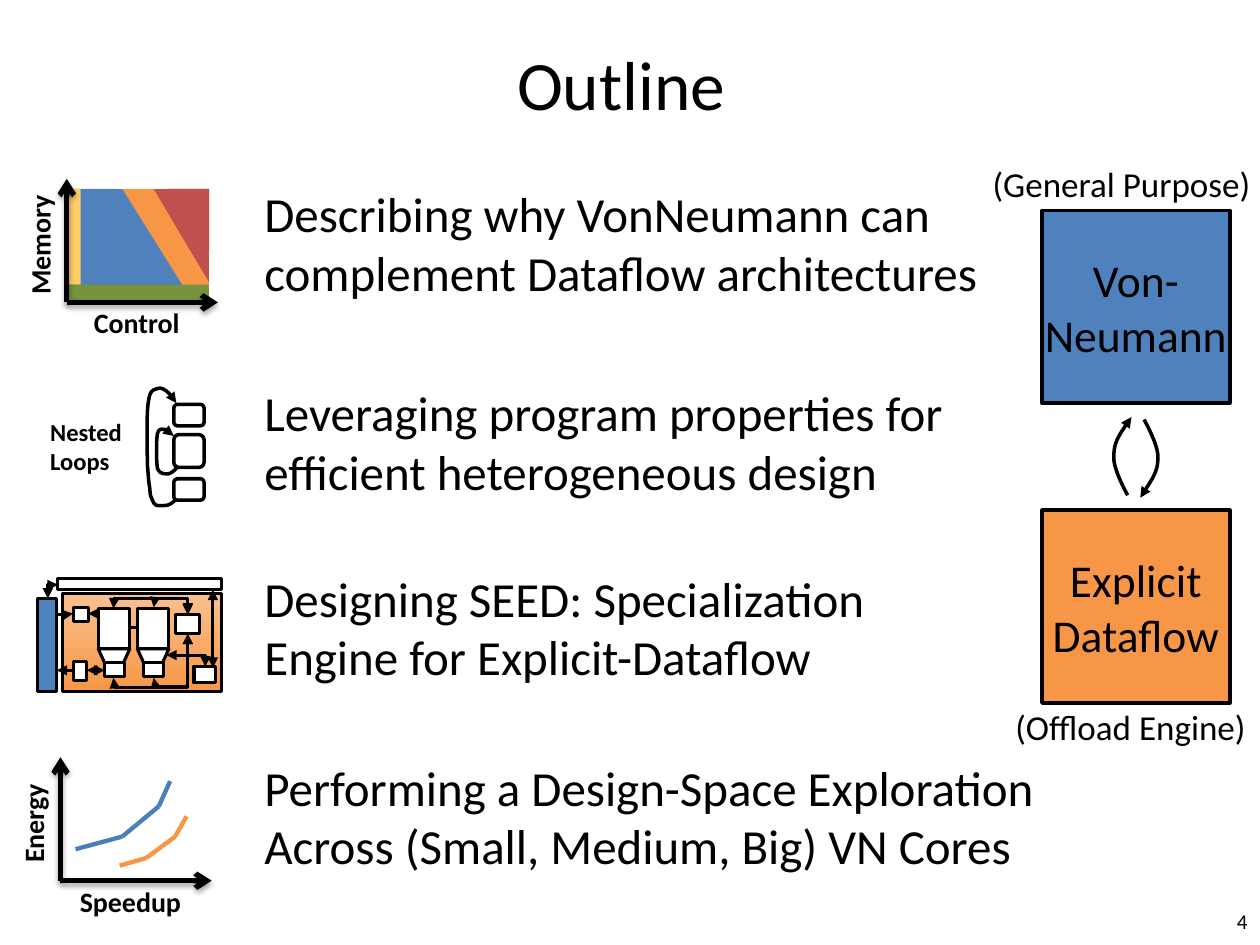
from dataclasses import dataclass
from lxml.etree import SubElement
from pptx import Presentation
from pptx.dml.color import RGBColor
from pptx.enum.shapes import MSO_CONNECTOR, MSO_SHAPE
from pptx.enum.text import MSO_ANCHOR, PP_ALIGN
from pptx.oxml.ns import qn
from pptx.util import Pt

PX = 9144
BLACK = RGBColor(0, 0, 0)
WHITE = RGBColor(255, 255, 255)
BLUE = RGBColor(0x4F, 0x81, 0xBD)
CURVE = RGBColor(0x4B, 0x7E, 0xBC)
ORANGE = RGBColor(0xF7, 0x96, 0x46)
PEACH = RGBColor(0xFA, 0xC0, 0x90)
RED = RGBColor(0xC0, 0x50, 0x4D)
GREEN = RGBColor(0x77, 0x93, 0x3C)
YELLOW = RGBColor(0xFF, 0xCC, 0x66)
RECT, ROUND = MSO_SHAPE.RECTANGLE, MSO_SHAPE.ROUNDED_RECTANGLE
FUNNEL, WEDGE = MSO_SHAPE.FLOWCHART_MANUAL_OPERATION, MSO_SHAPE.RIGHT_TRIANGLE
LEFT, MID, RIGHT = PP_ALIGN.LEFT, PP_ALIGN.CENTER, PP_ALIGN.RIGHT


@dataclass
class Box:
    left: int
    top: int
    wide: int
    high: int
    fill: RGBColor = WHITE
    edge: float = 0
    kind: MSO_SHAPE = RECT
    turn: int = 0


@dataclass
class Label:
    words: str
    left: int
    top: int
    wide: int
    high: int
    size: float
    bold: bool = False
    align: PP_ALIGN = LEFT
    turn: int = 0
    wrap: bool = True
    anchor: MSO_ANCHOR = MSO_ANCHOR.TOP


@dataclass
class Line:
    start: tuple[int, int]
    end: tuple[int, int]
    color: RGBColor = BLACK
    width: float = 1.75
    head: str = ""
    tail: str = ""
    glow: bool = False


@dataclass
class Elbow:
    left: int
    top: int
    wide: int
    high: int
    turn: int
    flip: bool
    bend: float = 0
    head: str = "triangle"


deck = Presentation()
deck.slide_width, deck.slide_height = 1000 * PX, 750 * PX
shapes = deck.slides.add_slide(deck.slide_layouts[6]).shapes


def style(frame, size: float, bold: bool, align: PP_ALIGN) -> None:
    for para in frame.paragraphs:
        para.alignment = align
        for run in para.runs:
            run.font.name, run.font.size = "Calibri", Pt(size)
            run.font.bold, run.font.color.rgb = bold, BLACK


def write(label: Label) -> None:
    spot = (label.left, label.top, label.wide, label.high)
    box = shapes.add_textbox(*(v * PX for v in spot))
    box.rotation = label.turn
    frame = box.text_frame
    frame.text = label.words
    frame.word_wrap, frame.vertical_anchor = label.wrap, label.anchor
    style(frame, label.size, label.bold, label.align)


def block(box: Box):
    spot = (box.left, box.top, box.wide, box.high)
    shape = shapes.add_shape(box.kind, *(v * PX for v in spot))
    shape.shadow.inherit = False
    shape.rotation = box.turn
    shape.fill.solid()
    shape.fill.fore_color.rgb = box.fill
    if box.edge:
        shape.line.color.rgb, shape.line.width = BLACK, Pt(box.edge)
    else:
        shape.line.fill.background()
    return shape


def stroke(shape, color: RGBColor, width: float, head: str, tail: str) -> None:
    shape.line.color.rgb, shape.line.width = color, Pt(width)
    edge = shape.line._get_or_add_ln()
    for tag, kind in (("a:headEnd", head), ("a:tailEnd", tail)):
        if kind:
            SubElement(edge, qn(tag), type=kind)


def link(line: Line) -> None:
    ends = (*line.start, *line.end)
    shape = shapes.add_connector(MSO_CONNECTOR.STRAIGHT, *(v * PX for v in ends))
    stroke(shape, line.color, line.width, line.head, line.tail)
    effect = SubElement(shape._element.spPr, qn("a:effectLst"))
    if line.glow:
        shade = SubElement(effect, qn("a:outerShdw"), blurRad="40000",
                           dist="23000", dir="5400000", rotWithShape="0")
        tint = SubElement(shade, qn("a:srgbClr"), val="000000")
        SubElement(tint, qn("a:alpha"), val="35000")


def bend(elbow: Elbow) -> None:
    ends = (elbow.left, elbow.top, elbow.left + elbow.wide, elbow.top + elbow.high)
    shape = shapes.add_connector(MSO_CONNECTOR.ELBOW, *(v * PX for v in ends))
    stroke(shape, BLACK, 1.75, elbow.head, "triangle")
    props = shape._element.spPr
    SubElement(props, qn("a:effectLst"))
    frame, geom = props.find(qn("a:xfrm")), props.find(qn("a:prstGeom"))
    frame.set("rot", str(elbow.turn * 60000))
    if elbow.flip:
        frame.set("flipV", "1")
    if elbow.bend:
        guide = f"val {round(elbow.bend * 100000)}"
        SubElement(geom.find(qn("a:avLst")), qn("a:gd"), name="adj1", fmla=guide)
    else:
        geom.set("prst", "bentConnector2")


def curve(points: list[tuple[int, int]], head: str = "", tail: str = "") -> None:
    pen = shapes.build_freeform(*points[0], scale=PX)
    pen.add_line_segments(points[1:], close=False)
    shape = pen.convert_to_shape()
    shape.shadow.inherit = False
    shape.fill.background()
    stroke(shape, BLACK, 2, head, tail)
    steps = shape._element.xpath(".//a:lnTo")
    for i in range(0, len(steps), 3):
        cubic = SubElement(steps[i].getparent(), qn("a:cubicBezTo"))
        for step in steps[i:i + 3]:
            cubic.append(step[0])
            step.getparent().remove(step)


def axes(x: int, y: int, across: str, upward: str) -> None:
    write(Label(across, x - 4, y - 2, 119, 37, 16, True, MID))
    write(Label(upward, x - 87, y - 64, 131, 37, 16, True, MID, 270))
    for end in ((x + 120, y), (x, y - 98)):
        link(Line((x, y), end, BLACK, 3, tail="arrow", glow=True))


def lane(x: int) -> None:
    block(Box(x, 483, 25, 32, edge=1.75))
    block(Box(x, 515, 25, 11, edge=1.75, kind=FUNNEL))
    block(Box(x + 5, 526, 16, 11, edge=1.75))


def core(words: str, top: int, fill: RGBColor) -> None:
    shape = block(Box(827, top, 149, 153, fill, 2, ROUND))
    shape.adjustments[0] = 0
    frame = shape.text_frame
    frame.text = words
    frame.word_wrap, frame.vertical_anchor = False, MSO_ANCHOR.MIDDLE
    style(frame, 26, False, MID)


def main() -> None:
    write(Label("Outline", 43, 26, 900, 79, 39.6, align=MID, anchor=MSO_ANCHOR.MIDDLE))
    write(Label("4", 767, 711, 233, 40, 12, align=RIGHT, anchor=MSO_ANCHOR.MIDDLE))

    for box in (Box(53, 150, 113, 90, BLUE), Box(52, 150, 12, 76, YELLOW),
                Box(78, 179, 116, 23, ORANGE, turn=58)):
        block(box)
    wedge = block(Box(107, 165, 74, 44, RED, kind=WEDGE, turn=270))
    wedge._element.spPr.find(qn("a:xfrm")).set("flipH", "1")
    for box in (Box(53, 226, 113, 14, GREEN), Box(166, 198, 11, 42),
                Box(145, 240, 28, 11), Box(92, 135, 41, 15)):
        block(box)
    axes(53, 240, "Control", "Memory")

    for words, top, wide in (
            ("Describing why VonNeumann can complement Dataflow architectures", 141, 641),
            ("Leveraging program properties for efficient heterogeneous design", 299, 575),
            ("Designing SEED: Specialization\nEngine for Explicit-Dataflow", 446, 602),
            ("Performing a Design-Space Exploration\nAcross (Small, Medium, Big) VN Cores", 596, 638)):
        write(Label(words, 200, top, wide, 104, 28))

    axes(48, 699, "Speedup", "Energy")
    for color, dots in ((CURVE, [(60, 674), (97, 664), (126, 640), (135, 620)]),
                        (ORANGE, [(95, 687), (116, 681), (139, 664), (148, 648)])):
        for start, end in zip(dots, dots[1:]):
            link(Line(start, end, color, 2.5))

    fill = block(Box(50, 471, 126, 78, edge=1.75)).fill
    fill.gradient()
    fill.gradient_angle = 270
    for stop, color, place in zip(fill.gradient_stops, (PEACH, ORANGE), (0, 1)):
        stop.color.rgb, stop.position = color, place
    for spot in ((46, 459, 130, 9), (30, 475, 15, 74, BLUE), (58, 482, 12, 11),
                 (58, 525, 11, 15), (154, 529, 17, 13), (139, 488, 19, 15)):
        block(Box(*spot, edge=1.75))
    lane(109)
    for elbow in (Elbow(38, 464, 8, 11, 180, True),
                  Elbow(117, 456, 5, 59, 270, True, 2.54),
                  Elbow(133, 471, 5, 27, 270, True, 2.45),
                  Elbow(118, 507, 35, 27, 90, False, 1.2),
                  Elbow(102, 491, 35, 59, 90, False, 1.21),
                  Elbow(143, 509, 9, 31, 270, True),
                  Elbow(45, 487, 13, 1, 0, True, 0.5, ""),
                  Elbow(70, 487, 39, 11, 180, False, 0.5, "")):
        bend(elbow)
    lane(78)
    link(Line((58, 532), (45, 532), tail="triangle"))
    for start, end in (((169, 468), (169, 530)), ((83, 532), (69, 532))):
        link(Line(start, end, head="triangle", tail="triangle"))

    write(Label("Nested Loops", 30, 326, 80, 57, 14, True))
    curve([(141, 370), (139, 373), (137, 375), (134, 376), (132, 376), (127, 377),
           (125, 372), (124, 366), (124, 349), (125, 344), (126, 339), (130, 341),
           (132, 341), (135, 342), (136, 344), (138, 346)], tail="triangle")
    curve([(139, 397), (138, 398), (136, 400), (133, 401), (131, 401), (127, 402),
           (124, 401), (122, 400), (122, 399), (121, 397), (120, 395), (119, 393),
           (119, 388), (118, 383), (118, 380), (117, 368), (117, 356), (116, 328),
           (118, 318), (119, 308), (124, 309), (127, 308), (130, 308), (134, 312),
           (136, 314), (138, 316), (139, 318), (140, 320)], tail="triangle")
    for top, high in ((345, 26), (380, 17), (321, 17)):
        block(Box(138, top, 24, high, edge=2, kind=ROUND))

    core("Von-\nNeumann", 167, BLUE)
    core("Explicit\nDataflow", 405, ORANGE)
    curve([(898, 331), (891, 341), (884, 351), (884, 362),
           (883, 372), (895, 393), (895, 393)], head="triangle")
    curve([(905, 395), (912, 384), (919, 374), (919, 364),
           (920, 354), (908, 333), (908, 333)], head="triangle")
    write(Label("(General Purpose)", 778, 124, 227, 44, 20, wrap=False))
    write(Label("(Offload Engine)", 796, 555, 205, 44, 20, wrap=False))
    deck.save("out.pptx")


if __name__ == "__main__":
    main()
